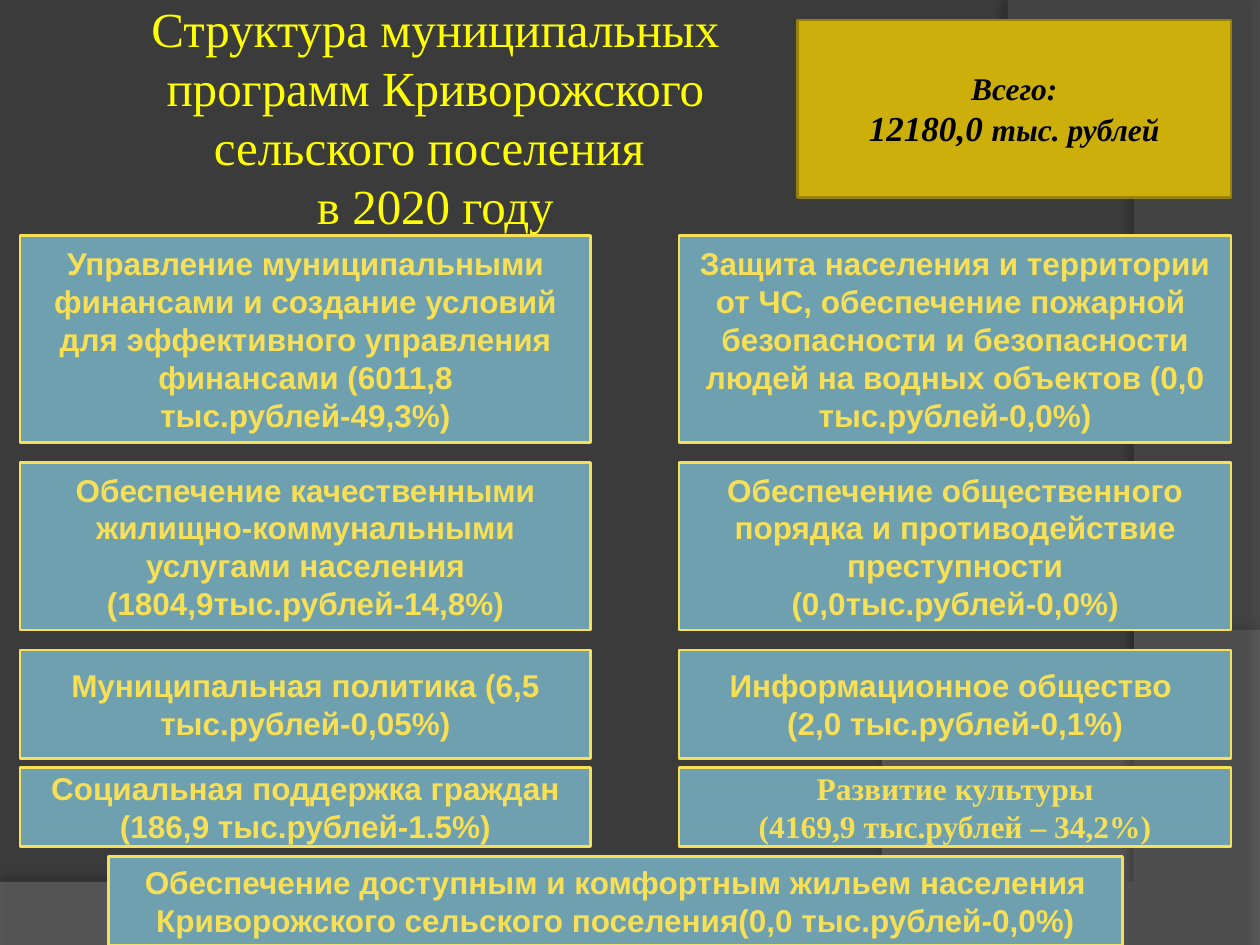
"""Builds a slide on the structure of a settlement's municipal programmes."""
import pptx
import pptx.dml.color
import pptx.enum.shapes
import pptx.enum.text
import pptx.oxml
import pptx.oxml.ns
import pptx.util
from pptx.util import Inches

COLORS = {
    "background": "3B3B3B", "floor": "7F7F7F", "side": "5E5E5E",
    "title": "FFFF00", "total": "CCAF0A", "total_line": "978107",
    "program": "6EA0B0", "accent": "F7DF56", "ink": "000000",
}
SERIF = "Times New Roman"
SANS = "Arial"


def color(name):
    return pptx.dml.color.RGBColor.from_string(COLORS[name])


def write_text(frame, paragraphs, font=SANS, size=18, ink="accent", bold=False, italic=False):
    """Fill a frame with centred paragraphs, each a list of (text, size) spans or a string."""
    frame.word_wrap = True
    frame.auto_size = pptx.enum.text.MSO_AUTO_SIZE.NONE
    frame.vertical_anchor = pptx.enum.text.MSO_ANCHOR.MIDDLE
    for index, spans in enumerate(paragraphs):
        para = frame.add_paragraph() if index else frame.paragraphs[0]
        para.alignment = pptx.enum.text.PP_ALIGN.CENTER
        for text, span_size in [(spans, size)] if isinstance(spans, str) else spans:
            for number, line in enumerate(text.split("\n")):
                if number:
                    para.add_line_break()
                span = para.add_run()
                span.text = line
                span.font.name = font
                span.font.size = pptx.util.Pt(span_size)
                span.font.bold = bold
                span.font.italic = italic
                span.font.color.rgb = color(ink)


def curve(start, first, second, end, steps=40):
    """Return points along a cubic curve."""
    points = []
    for step in range(steps + 1):
        t = step / steps
        weights = ((1 - t) ** 3, 3 * t * (1 - t) ** 2, 3 * t * t * (1 - t), t ** 3)
        points.append(tuple(
            sum(weight * value for weight, value in zip(weights, values))
            for values in zip(start, first, second, end)))
    return points


class ProgramSlide:
    """Holds the style and the current slide."""

    def __init__(self, deck):
        self.slide = deck.slides.add_slide(deck.slide_layouts[5])
        fill = self.slide.background.fill
        fill.solid()
        fill.fore_color.rgb = color("background")

    def backdrop(self, points, fill, alpha, shadow_alpha, distance, direction):
        builder = self.slide.shapes.build_freeform(*points[0], scale=Inches(1))
        builder.add_line_segments(points[1:], close=True)
        shape = builder.convert_to_shape()
        shape.fill.solid()
        shape.fill.fore_color.rgb = color(fill)
        shape.line.fill.background()
        fill_color = shape.fill._xPr.find(".//" + pptx.oxml.ns.qn("a:srgbClr"))
        opacity = pptx.oxml.parse_xml(
            f'<a:alpha {pptx.oxml.ns.nsdecls("a")} val="{alpha * 1000}"/>')
        fill_color.append(opacity)
        shape._element.spPr.append(pptx.oxml.parse_xml(
            f'<a:effectLst {pptx.oxml.ns.nsdecls("a")}>'
            f'<a:outerShdw blurRad="{pptx.util.Pt(4)}" dist="{pptx.util.Pt(distance)}" '
            f'dir="{direction * 60000}" algn="ctr" rotWithShape="0">'
            f'<a:srgbClr val="000000"><a:alpha val="{shadow_alpha * 1000}"/></a:srgbClr>'
            '</a:outerShdw></a:effectLst>'))

    def title(self, text, left, top, width, height):
        title = self.slide.shapes.title
        title.left, title.top = Inches(left), Inches(top)
        title.width, title.height = Inches(width), Inches(height)
        frame = title.text_frame
        frame.margin_left = frame.margin_right = Inches(0.05)
        frame.margin_top = frame.margin_bottom = Inches(0.05)
        write_text(frame, [text], font=SERIF, size=28, ink="title")
        self.slide.shapes._spTree.append(title._element)

    def box(self, paragraphs, left, top, width, height,
            fill="program", line="accent", **text_format):
        box = self.slide.shapes.add_shape(
            pptx.enum.shapes.MSO_SHAPE.RECTANGLE,
            Inches(left), Inches(top), Inches(width), Inches(height))
        box.shadow.inherit = False
        box.fill.solid()
        box.fill.fore_color.rgb = color(fill)
        box.line.color.rgb = color(line)
        box.line.width = pptx.util.Pt(1.5)
        write_text(box.text_frame, paragraphs, bold=True, **text_format)


COLUMNS = [(0.16, 4.53), (5.39, 4.38)]
ROWS = [(1.87, 1.64), (3.67, 1.33), (5.16, 0.86), (6.09, 0.63)]
PROGRAMS = [
    [(["Управление муниципальными финансами и создание условий для эффективного "
       "управления финансами (6011,8 тыс.рублей-49,3%)"], SANS),
     (["Защита населения и территории от ЧС, обеспечение пожарной  безопасности и "
       "безопасности людей на водных объектов (0,0 тыс.рублей-0,0%)"], SANS)],
    [(["Обеспечение качественными жилищно-коммунальными услугами населения "
       "(1804,9тыс.рублей-14,8%)"], SANS),
     (["Обеспечение общественного порядка и противодействие преступности "
       "(0,0тыс.рублей-0,0%)"], SANS)],
    [(["Муниципальная политика (6,5 тыс.рублей-0,05%)"], SANS),
     (["Информационное общество ", "(2,0 тыс.рублей-0,1%)"], SANS)],
    [(["Социальная поддержка граждан (186,9 тыс.рублей-1.5%)"], SANS),
     (["Развитие культуры", "(4169,9 тыс.рублей – 34,2%)"], SERIF)],
]


def main():
    deck = pptx.Presentation()
    deck.slide_width, deck.slide_height = Inches(10), Inches(7.5)
    page = ProgramSlide(deck)
    page.backdrop(
        [(0, 7.5), (10, 7.5)] + curve((10, 5.2), (5.59, 7.29), (3.91, 7.19), (0, 7.05)),
        "floor", alpha=45, shadow_alpha=35, distance=3.5, direction=270)
    page.backdrop(
        [(10, 0.02), (10, 7.5)] + curve((8.21, 7.5), (9.35, 6.19), (10.18, 3), (8, 0)),
        "side", alpha=40, shadow_alpha=45, distance=4, direction=180)
    page.title("Структура муниципальных программ Криворожского сельского поселения \n"
               "в 2020 году", 0.5, 0.3, 5.91, 1.25)
    page.box(["Всего:", [("12180,0 ", 20), ("тыс. рублей", 18)]], 6.33, 0.16, 3.44, 1.41,
             fill="total", line="total_line", font=SERIF, ink="ink", italic=True)
    for (top, height), programs in zip(ROWS, PROGRAMS):
        for (left, width), (paragraphs, font) in zip(COLUMNS, programs):
            page.box(paragraphs, left, top, width, height, font=font)
    page.box(["Обеспечение доступным и комфортным жильем населения Криворожского "
              "сельского поселения(0,0 тыс.рублей-0,0%)"], 0.86, 6.8, 8.05, 0.7)
    deck.save("out.pptx")


if __name__ == "__main__":
    main()
